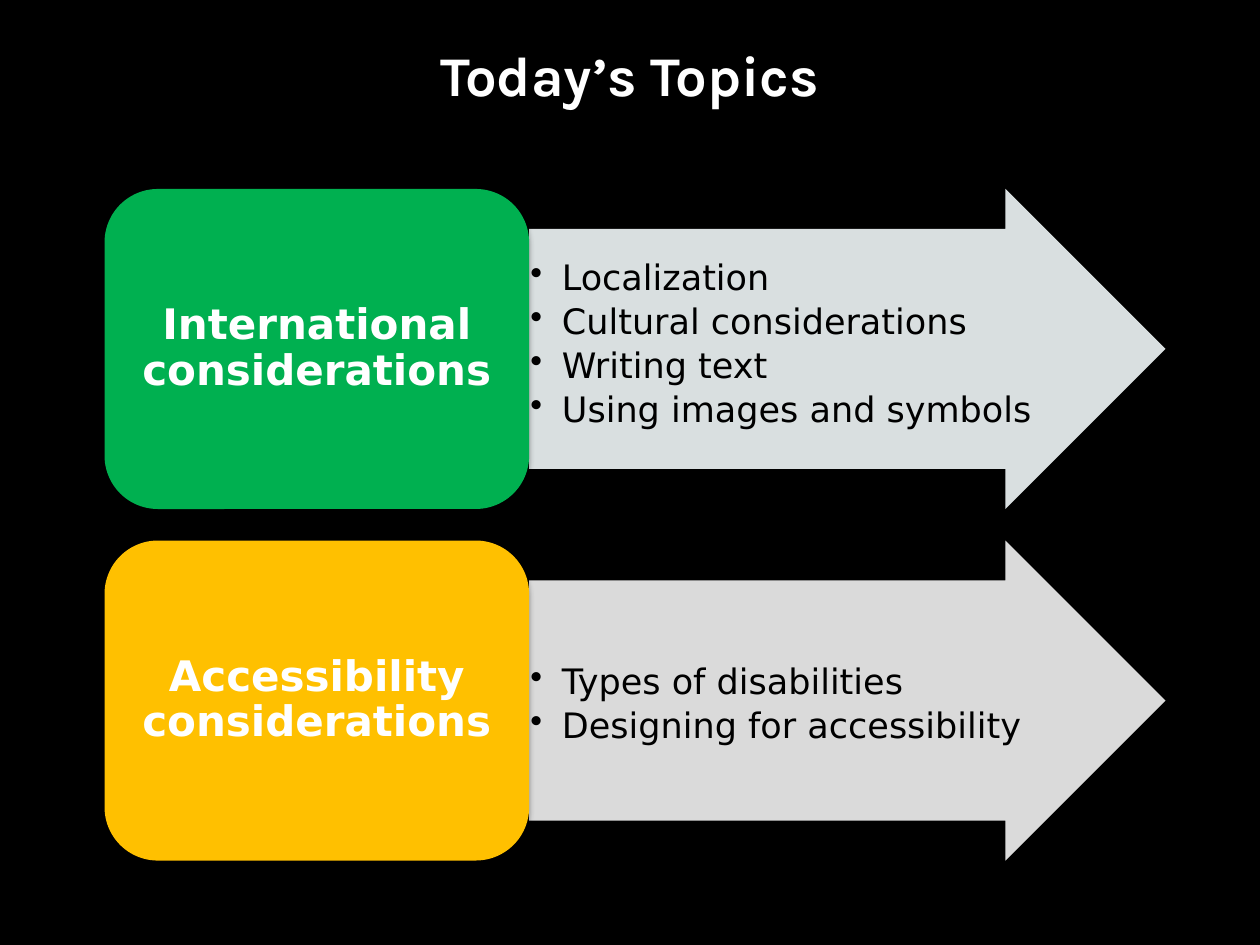
from lxml import etree
from pptx import Presentation
from pptx.dml.color import RGBColor
from pptx.enum.shapes import MSO_SHAPE
from pptx.enum.text import MSO_ANCHOR, PP_ALIGN
from pptx.oxml.ns import qn
from pptx.util import Inches, Pt

ARROW, ROUNDED = MSO_SHAPE.RIGHT_ARROW, MSO_SHAPE.ROUNDED_RECTANGLE
CENTER, LEFT = PP_ALIGN.CENTER, PP_ALIGN.LEFT
MIDDLE, TOP = MSO_ANCHOR.MIDDLE, MSO_ANCHOR.TOP
BODY_FONT, TITLE_FONT = "DejaVu Sans", "Karla"

# Grid: a label column, an arrow column and two equal rows
LABEL_LEFT, LABEL_WIDTH = 0.83, 3.37
ARROW_LEFT, ARROW_WIDTH = LABEL_LEFT + LABEL_WIDTH, 5.05
ROW_TOP, ROW_HEIGHT, ROW_PITCH = 1.5, 2.54, 2.79
SHAFT_SHARE = 0.75

# label, label colour, arrow colour, space above the list, topics
ROWS = [
    ("International considerations", "00B050", "F1F8F9", 0.25,
     ["Localization", "Cultural considerations", "Writing text",
      "Using images and symbols"]),
    ("Accessibility considerations", "FFC000", "F2F2F2", 0.69,
     ["Types of disabilities", "Designing for accessibility"]),
]


def color(hex_string):
    return RGBColor.from_string(hex_string)


def add_child(parent, tag, **attributes):
    child = etree.SubElement(parent, qn(tag))
    for name, value in attributes.items():
        child.set(name, str(value))
    return child


def set_text(box, lines, font, size, hex_string, bold, align, anchor, after=0):
    frame = box.text_frame
    frame.word_wrap = True
    frame.vertical_anchor = anchor
    frame.text = "\n".join(lines)
    for para in frame.paragraphs:
        para.alignment = align
        para.space_after = Pt(after)
        for span in para.runs:
            span.font.name = font
            span.font.size = Pt(size)
            span.font.bold = bold
            span.font.color.rgb = color(hex_string)


def add_box(page, left, top, width, height):
    return page.shapes.add_textbox(
        Inches(left), Inches(top), Inches(width), Inches(height))


def add_filled(page, kind, left, top, width, hex_string):
    shape = page.shapes.add_shape(
        kind, Inches(left), Inches(top), Inches(width), Inches(ROW_HEIGHT))
    shape.fill.solid()
    shape.fill.fore_color.rgb = color(hex_string)
    shape.line.fill.background()
    shape.shadow.inherit = False
    return shape


def add_title(page, text):
    box = add_box(page, 0, 0, 10, 1.17)
    set_text(box, [text], TITLE_FONT, 32, "FFFFFF", True, CENTER, MIDDLE)


def add_arrow(page, top, hex_string):
    arrow = add_filled(page, ARROW, ARROW_LEFT, top, ARROW_WIDTH, hex_string)
    arrow.adjustments[0] = SHAFT_SHARE
    fill_color = arrow._element.spPr.find(".//" + qn("a:srgbClr"))
    add_child(fill_color, "a:alpha", val=90000)


def add_topics(page, top, space_above, topics):
    shaft_top = top + ROW_HEIGHT * (1 - SHAFT_SHARE) / 2
    box = add_box(page, ARROW_LEFT, shaft_top, 4.1, ROW_HEIGHT * SHAFT_SHARE)
    set_text(box, topics, BODY_FONT, 20, "000000", False, LEFT, TOP, 3.5)
    frame = box.text_frame
    frame.margin_left = frame.margin_right = frame.margin_bottom = Inches(0.01)
    frame.margin_top = Inches(space_above)
    for para in frame.paragraphs:
        para.line_spacing = 0.9
        properties = para._p.get_or_add_pPr()
        properties.set("marL", str(Inches(0.25)))
        properties.set("indent", str(-Inches(0.25)))
        add_child(properties, "a:buChar", char="•")


def add_label(page, top, text, hex_string):
    label = add_filled(page, ROUNDED, LABEL_LEFT, top, LABEL_WIDTH, hex_string)
    set_text(label, [text], BODY_FONT, 24, "FFFFFF", True, CENTER, MIDDLE)
    label.text_frame.paragraphs[0].line_spacing = 0.9
    # Soft shadow falling straight down
    effects = label._element.spPr.find(qn("a:effectLst"))
    shadow = add_child(effects, "a:outerShdw", blurRad=Pt(3.1), dist=Pt(1.8),
                       dir=5400000, rotWithShape=0)
    add_child(add_child(shadow, "a:srgbClr", val="000000"),
              "a:alpha", val=35000)


def main():
    deck = Presentation()
    deck.slide_width, deck.slide_height = Inches(10), Inches(7.5)
    page = deck.slides.add_slide(deck.slide_layouts[6])
    page.background.fill.solid()
    page.background.fill.fore_color.rgb = color("000000")

    add_title(page, "Today’s Topics")
    for index, row in enumerate(ROWS):
        label, label_color, arrow_color, space_above, topics = row
        top = ROW_TOP + index * ROW_PITCH
        add_arrow(page, top, arrow_color)
        add_topics(page, top, space_above, topics)
        add_label(page, top, label, label_color)

    deck.save("out.pptx")


if __name__ == "__main__":
    main()
